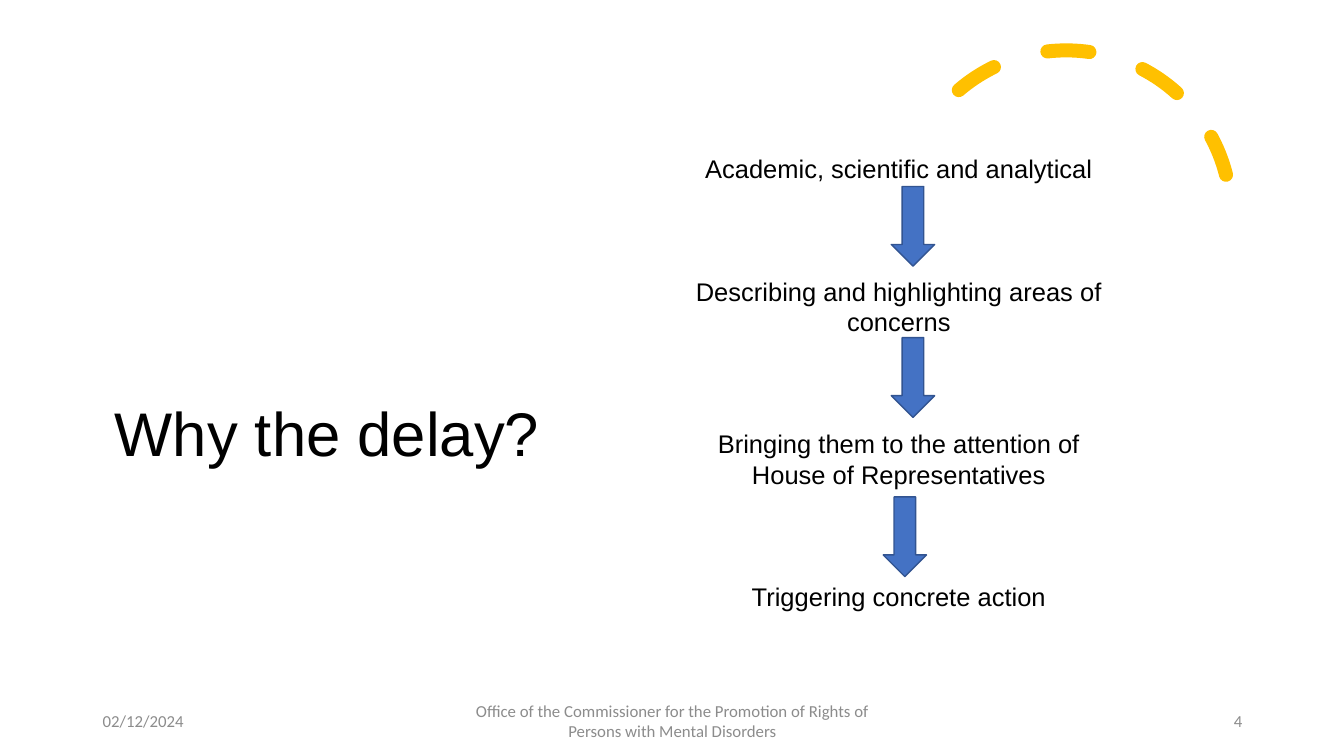
from dataclasses import dataclass

import pptx
import pptx.dml.color
import pptx.enum.dml
import pptx.enum.shapes
import pptx.enum.text
import pptx.util

Align = pptx.enum.text.PP_ALIGN
Anchor = pptx.enum.text.MSO_ANCHOR
Kind = pptx.enum.shapes.MSO_SHAPE
Inches = pptx.util.Inches
Pt = pptx.util.Pt


@dataclass(frozen=True)
class Theme:
    ink: str = "000000"
    gray: str = "8C8C8C"
    blue: str = "4472C4"
    edge: str = "325491"
    gold: str = "FFC000"
    head: str = "Arial"
    foot: str = "Calibri"
    title: float = 44
    body: float = 18.2
    pitch: float = 21.85
    note: float = 12


@dataclass(frozen=True)
class Box:
    left: float
    top: float
    width: float
    height: float

    def place(self) -> list:
        return [Inches(n) for n in (self.left, self.top, self.width, self.height)]


@dataclass(frozen=True)
class Note:
    text: str
    box: Box
    align: Align


THEME = Theme()
STEPS = (
    "Academic, scientific and analytical",
    "Describing and highlighting areas of concerns",
    "Bringing them to the attention of House of Representatives",
    "Triggering concrete action",
)
ARROWS = tuple(Box(left, top, 0.43, 0.79)
               for left, top in ((8.84, 1.85), (8.84, 3.35), (8.76, 4.93)))
NOTES = (
    Note("02/12/2024", Box(0.92, 6.95, 3, 0.4), Align.LEFT),
    Note("Office of the Commissioner for the Promotion of Rights of "
         "Persons with Mental Disorders", Box(4.42, 6.95, 4.5, 0.4), Align.CENTER),
    Note("4", Box(9.42, 6.95, 3, 0.4), Align.RIGHT),
)


def shade(code: str) -> pptx.dml.color.RGBColor:
    return pptx.dml.color.RGBColor.from_string(code)


def write(slide, box: Box, *lines: str, size: float, font: str = THEME.head,
          color: str = THEME.ink, align: Align = Align.LEFT,
          anchor: Anchor = Anchor.MIDDLE, pitch=None, gap: float = 0) -> None:
    frame = slide.shapes.add_textbox(*box.place()).text_frame
    frame.word_wrap = True
    frame.vertical_anchor = anchor
    for index, line in enumerate(lines):
        para = frame.paragraphs[0] if index == 0 else frame.add_paragraph()
        para.alignment = align
        para.line_spacing = pitch
        para.space_before = Pt(gap if index else 0)
        run = para.add_run()
        run.text = line
        run.font.size = Pt(size)
        run.font.name = font
        run.font.color.rgb = shade(color)


def draw_arc(slide, box: Box) -> None:
    arc = slide.shapes.add_shape(Kind.ARC, *box.place())
    arc.shadow.inherit = False
    arc.adjustments[0] = 146.13
    arc.adjustments[1] = 0
    arc.rotation = 345.8
    arc.fill.background()
    arc.line.color.rgb = shade(THEME.gold)
    arc.line.width = Pt(10)
    arc.line.dash_style = pptx.enum.dml.MSO_LINE.DASH
    arc.line._get_or_add_ln().set("cap", "rnd")


def draw_arrow(slide, box: Box) -> None:
    arrow = slide.shapes.add_shape(Kind.DOWN_ARROW, *box.place())
    arrow.shadow.inherit = False
    arrow.fill.solid()
    arrow.fill.fore_color.rgb = shade(THEME.blue)
    arrow.line.color.rgb = shade(THEME.edge)
    arrow.line.width = Pt(1)


def main() -> None:
    deck = pptx.Presentation()
    deck.slide_width, deck.slide_height = Inches(13.33), Inches(7.5)
    slide = deck.slides.add_slide(deck.slide_layouts[6])
    draw_arc(slide, Box(8.94, 0.5, 3.27, 3.27))
    write(slide, Box(1.04, 2.77, 4.6, 3.13), "Why the delay?",
          size=THEME.title, pitch=0.9)
    write(slide, Box(6.76, 1.47, 4.31, 5.09), *STEPS, size=THEME.body,
          align=Align.CENTER, anchor=Anchor.TOP,
          pitch=Pt(THEME.pitch), gap=3 * THEME.pitch)
    for box in ARROWS:
        draw_arrow(slide, box)
    for note in NOTES:
        write(slide, note.box, note.text, size=THEME.note, font=THEME.foot,
              color=THEME.gray, align=note.align)
    deck.save("out.pptx")


if __name__ == "__main__":
    main()
